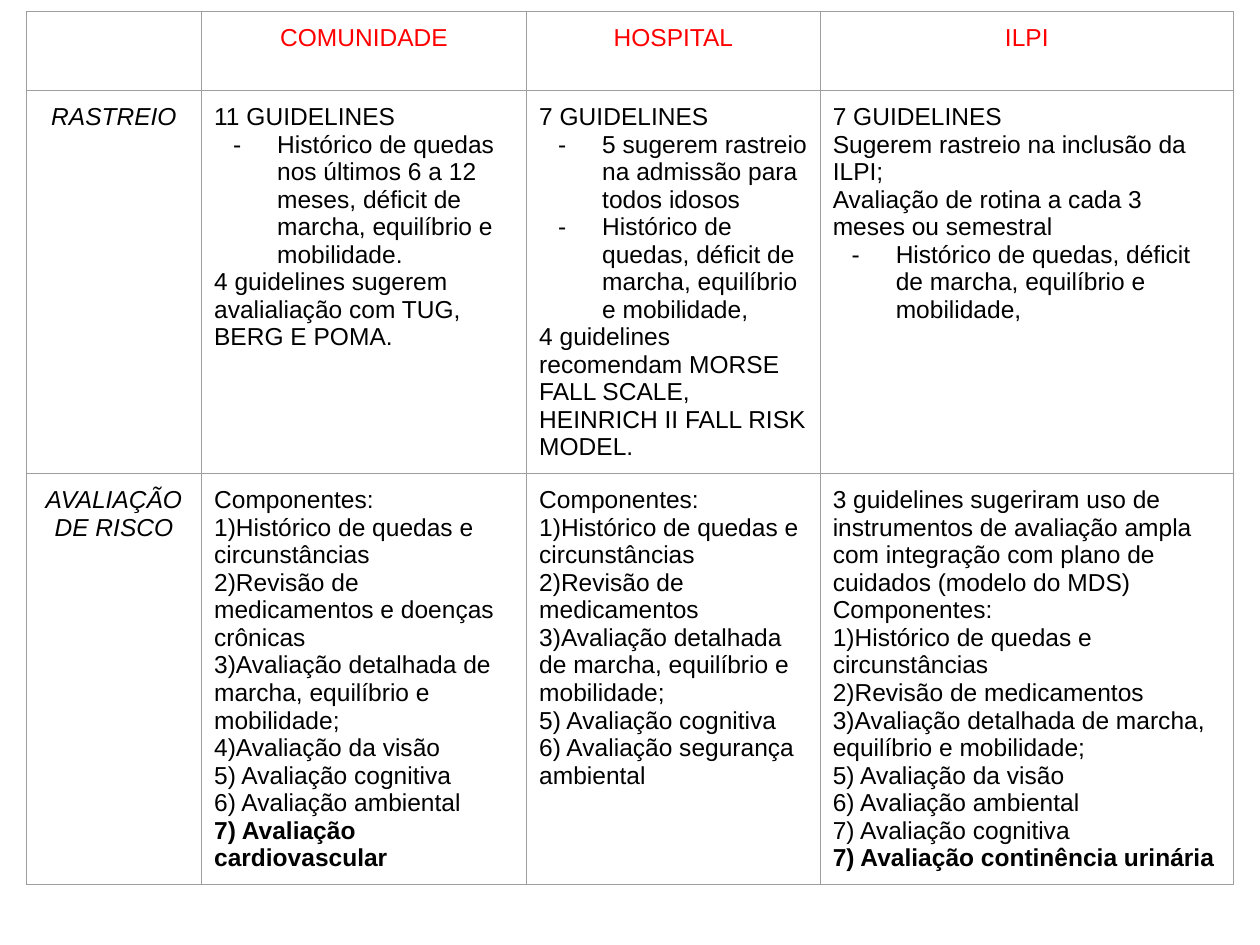
from lxml import etree
from pptx import Presentation
from pptx import util as u
from pptx.dml.color import RGBColor
from pptx.enum import text
from pptx.oxml.ns import qn

COLUMN_WIDTHS = [1.39, 2.58, 2.33, 3.28]
ROW_HEIGHTS = [0.63, 3.04, 3.26]
LEFT, TOP = 0.21, 0.09
INSET = 0.1
BULLET, STRONG = "- ", "**"  # paragraph prefixes: dash bullet, bold

SETTINGS = ["COMUNIDADE", "HOSPITAL", "ILPI"]
HISTORY = "1)Histórico de quedas e circunstâncias"
MEDICATION = "2)Revisão de medicamentos"
GAIT = "3)Avaliação detalhada de marcha, equilíbrio e mobilidade;"
DEFICITS = "- Histórico de quedas, déficit de marcha, equilíbrio e mobilidade,"

GUIDANCE = {
    "RASTREIO": [
        ["11 GUIDELINES",
         "- Histórico de quedas nos últimos 6 a 12 meses, déficit de marcha, "
         "equilíbrio e mobilidade.",
         "4 guidelines sugerem avalialiação com TUG, BERG E POMA."],
        ["7 GUIDELINES",
         "- 5 sugerem rastreio na admissão para todos idosos",
         DEFICITS,
         "4 guidelines recomendam MORSE FALL SCALE, HEINRICH II FALL RISK MODEL."],
        ["7 GUIDELINES",
         "Sugerem rastreio na inclusão da ILPI;",
         "Avaliação de rotina a cada 3 meses ou semestral",
         DEFICITS],
    ],
    "AVALIAÇÃO DE RISCO": [
        ["Componentes:", HISTORY, MEDICATION + " e doenças crônicas", GAIT,
         "4)Avaliação da visão", "5) Avaliação cognitiva",
         "6) Avaliação ambiental", "**7) Avaliação cardiovascular"],
        ["Componentes:", HISTORY, MEDICATION, GAIT,
         "5) Avaliação cognitiva", "6) Avaliação segurança ambiental"],
        ["3 guidelines sugeriram uso de instrumentos de avaliação ampla com "
         "integração com plano de cuidados (modelo do MDS)",
         "Componentes:", HISTORY, MEDICATION, GAIT,
         "5) Avaliação da visão", "6) Avaliação ambiental",
         "7) Avaliação cognitiva", "**7) Avaliação continência urinária"],
    ],
}


def rgb(value):
    return RGBColor.from_string(value)


def set_borders(cell, color="9E9E9E", width=0.75):
    properties = cell._tc.get_or_add_tcPr()
    for position, side in enumerate(["lnL", "lnR", "lnT", "lnB"]):
        line = etree.Element(qn(f"a:{side}"), w=str(u.Pt(width)))
        fill = etree.SubElement(line, qn("a:solidFill"))
        etree.SubElement(fill, qn("a:srgbClr"), val=color)
        properties.insert(position, line)


def add_dash(paragraph, color="000000"):
    """Give the paragraph a dash bullet with a hanging indent."""
    properties = paragraph._p.get_or_add_pPr()
    properties.set("marL", str(u.Inches(0.5)))
    properties.set("indent", str(u.Inches(-0.35)))
    bullet_color = etree.SubElement(properties, qn("a:buClr"))
    etree.SubElement(bullet_color, qn("a:srgbClr"), val=color)
    etree.SubElement(properties, qn("a:buFont"), typeface="Arial")
    etree.SubElement(properties, qn("a:buChar"), char="-")


def format_cell(cell):
    for side in ["left", "right", "top", "bottom"]:
        setattr(cell, f"margin_{side}", u.Inches(INSET))
    set_borders(cell)
    cell.fill.solid()
    cell.fill.fore_color.rgb = rgb("FFFFFF")


def write_cell(cell, lines, color="000000", align=None, **font_values):
    for index, line in enumerate(lines):
        frame = cell.text_frame
        paragraph = frame.add_paragraph() if index else frame.paragraphs[0]
        paragraph.alignment = align
        if line.startswith(BULLET):
            add_dash(paragraph)
        run = paragraph.add_run()
        run.text = line.removeprefix(BULLET).removeprefix(STRONG)
        values = {"name": "Arial", "size": u.Pt(14),
                  "bold": line.startswith(STRONG), **font_values}
        for name, value in values.items():
            setattr(run.font, name, value)
        run.font.color.rgb = rgb(color)


def add_grid(slide):
    frame = slide.shapes.add_table(
        len(ROW_HEIGHTS), len(COLUMN_WIDTHS), u.Inches(LEFT), u.Inches(TOP),
        u.Inches(sum(COLUMN_WIDTHS)), u.Inches(sum(ROW_HEIGHTS)))
    grid = frame.table
    grid.first_row = grid.horz_banding = False
    for column, width in zip(grid.columns, COLUMN_WIDTHS):
        column.width = u.Inches(width)
    for row, height in zip(grid.rows, ROW_HEIGHTS):
        row.height = u.Inches(height)
    for cell in grid.iter_cells():
        format_cell(cell)
    return grid


def main():
    deck = Presentation()
    deck.slide_width, deck.slide_height = u.Inches(10), u.Inches(7.5)
    slide = deck.slides.add_slide(deck.slide_layouts[6])
    grid = add_grid(slide)
    center = text.PP_ALIGN.CENTER

    for column, setting in enumerate(SETTINGS, 1):
        write_cell(grid.cell(0, column), [setting], "FF0000", center)
    for row, (stage, advice) in enumerate(GUIDANCE.items(), 1):
        write_cell(grid.cell(row, 0), [stage], align=center, italic=True)
        for column, lines in enumerate(advice, 1):
            write_cell(grid.cell(row, column), lines)

    deck.save("out.pptx")


if __name__ == "__main__":
    main()
